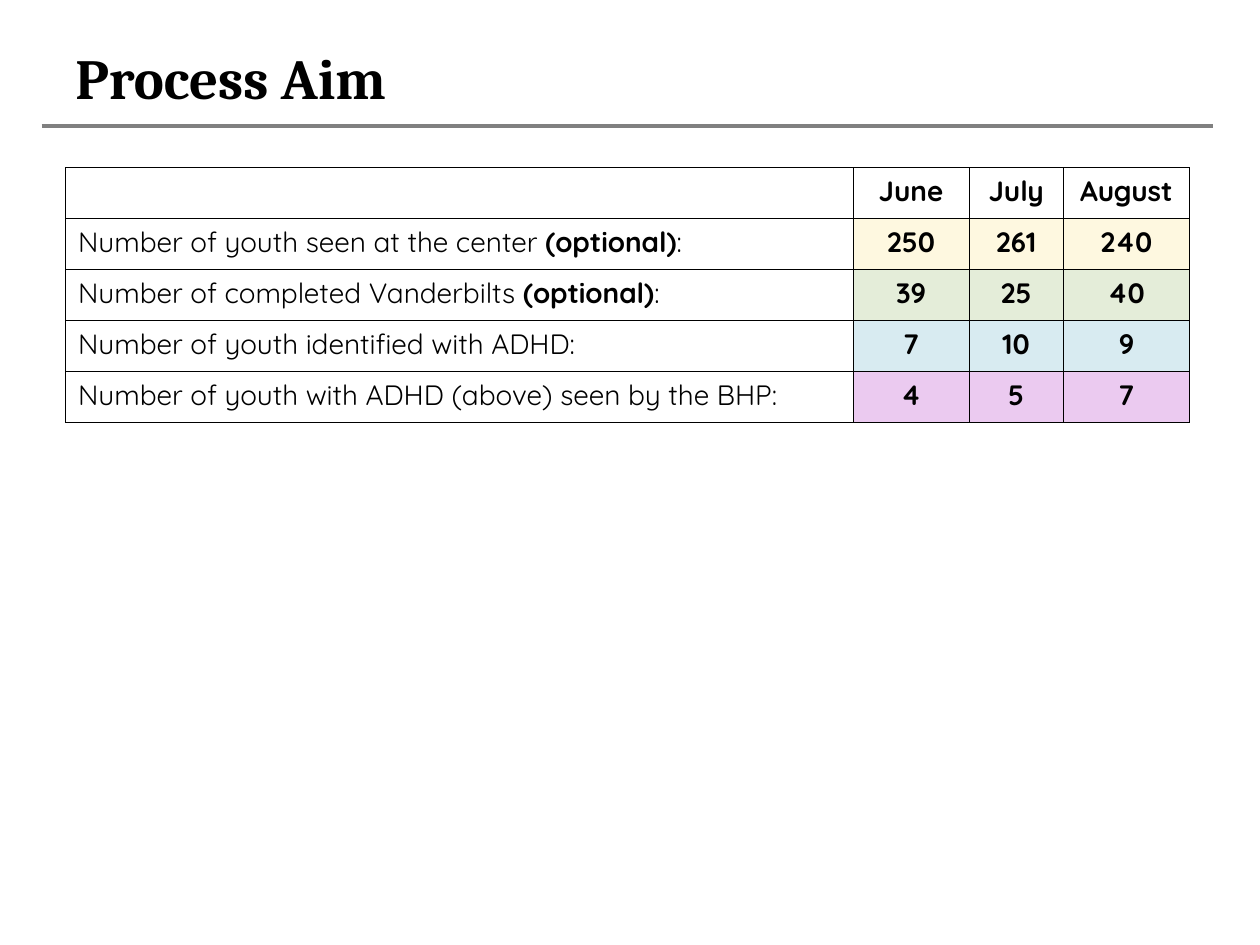
from lxml import etree
from pptx import Presentation
from pptx.dml.color import RGBColor
from pptx.enum import shapes, text
from pptx.oxml import ns
from pptx.util import Inches, Pt


def color(value):
    return RGBColor.from_string(value)


def add_run(paragraph, words, font, size, bold):
    run = paragraph.add_run()
    run.text = words
    run.font.name = font
    run.font.size = Pt(size)
    run.font.bold = bold
    run.font.color.rgb = color("000000")


prs = Presentation()
prs.slide_width = Inches(10)
prs.slide_height = Inches(7.5)
slide = prs.slides.add_slide(prs.slide_layouts[6])

rule = slide.shapes.add_connector(
    shapes.MSO_CONNECTOR.STRAIGHT, Inches(0.33), Inches(1), Inches(9.63), Inches(1)
)
rule.line.color.rgb = color("808080")
rule.line.width = Pt(2.25)
etree.SubElement(rule._element.spPr, ns.qn("a:effectLst"))

heading = slide.shapes.add_textbox(Inches(0.5), Inches(0.3), Inches(9), Inches(0.62))
heading.text_frame.word_wrap = True
heading.text_frame.vertical_anchor = text.MSO_ANCHOR.MIDDLE
add_run(heading.text_frame.paragraphs[0], "Process Aim", "Cambria", 32.4, True)

optional = ("(optional)", True)
colon = (":", False)
measures = [
    ([], ["June", "July", "August"], None),
    ([("Number of youth seen at the center ", False), optional, colon],
     ["250", "261", "240"], "FEF8E0"),
    ([("Number of completed Vanderbilts ", False), optional, colon],
     ["39", "25", "40"], "E4EDD9"),
    ([("Number of youth identified with ADHD:", False)],
     ["7", "10", "9"], "D8EBF1"),
    ([("Number of youth with ADHD (above) seen by the BHP:", False)],
     ["4", "5", "7"], "EBCAF0"),
]
widths = [6.25, 0.92, 0.75, 1]
row_height = 0.405

monthly = slide.shapes.add_table(
    len(measures), len(widths), Inches(0.52), Inches(1.33),
    Inches(sum(widths)), Inches(row_height * len(measures))
).table
monthly.first_row = False
monthly.horz_banding = False
for column, width in zip(monthly.columns, widths):
    column.width = Inches(width)

for row, (label, counts, tint) in enumerate(measures):
    monthly.rows[row].height = Inches(row_height)
    entries = [label] + [[(count, True)] for count in counts]
    for col, entry in enumerate(entries):
        cell = monthly.cell(row, col)
        paragraph = cell.text_frame.paragraphs[0]
        if col:
            paragraph.alignment = text.PP_ALIGN.CENTER
        for words, bold in entry:
            add_run(paragraph, words, "Quicksand", 16, bold)

        properties = cell._tc.get_or_add_tcPr()
        for side in ("lnL", "lnR", "lnT", "lnB"):
            border = etree.SubElement(properties, ns.qn(f"a:{side}"), w=str(Pt(0.5)))
            paint = etree.SubElement(border, ns.qn("a:solidFill"))
            etree.SubElement(paint, ns.qn("a:srgbClr"), val="000000")
        if col and tint:
            cell.fill.solid()
            cell.fill.fore_color.rgb = color(tint)
        else:
            cell.fill.background()

prs.save("out.pptx")
